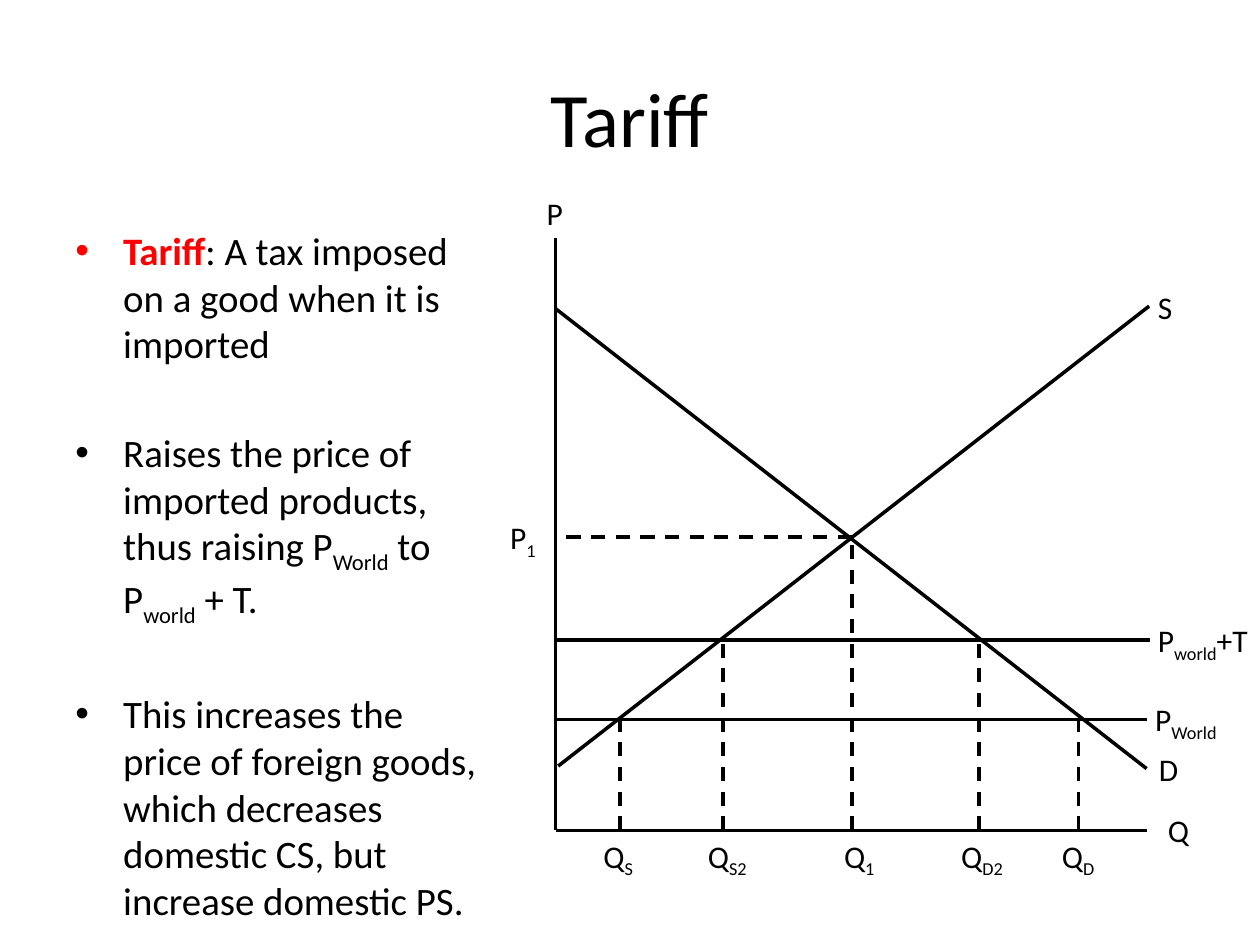
from lxml.etree import SubElement
from pptx import Presentation
from pptx.dml.color import RGBColor
from pptx.enum.dml import MSO_LINE
from pptx.enum.shapes import MSO_CONNECTOR
from pptx.enum.text import MSO_ANCHOR, PP_ALIGN
from pptx.oxml.ns import qn
from pptx.util import Inches, Pt

FONT = "Calibri"
BLACK, RED = "000000", "FF0000"
LEFT, RIGHT, TOP, BASE = 4.41, 9.1, 1.89, 6.59
EQUILIBRIUM = (6.76, 4.26)
WORLD_PRICE, TARIFF_PRICE = 5.71, 5.08
LABEL_HEIGHT = 0.4
QUANTITY_WIDTH = 0.65

POINTS = [
    ("Tariff", (": A tax imposed on a good when it is imported",)),
    ("", ("Raises the price of imported products, thus raising P", "World",
          " to P", "world", " + T.")),
    ("", ("This increases the price of foreign goods, which decreases "
          "domestic CS, but increase domestic PS.",)),
]
SOLID_LINES = [
    ((LEFT, TOP), (LEFT, BASE)),
    ((LEFT, BASE), (RIGHT, BASE)),
    ((4.43, 6.08), (9.12, 2.43)),
    ((LEFT, 2.45), (RIGHT, 6.1)),
    ((LEFT, WORLD_PRICE), (RIGHT, WORLD_PRICE)),
    ((LEFT, TARIFF_PRICE), (9.13, TARIFF_PRICE)),
]
QUANTITIES = [
    (4.92, WORLD_PRICE, 4.69, ("Q", "S")),
    (5.74, TARIFF_PRICE, 5.52, ("Q", "S2")),
    (EQUILIBRIUM[0], EQUILIBRIUM[1], 6.6, ("Q", "1")),
    (7.77, TARIFF_PRICE, 7.53, ("Q", "D2")),
    (8.56, WORLD_PRICE, 8.33, ("Q", "D")),
]
LABELS = [
    (4.24, 1.69, 0.33, ("P",)),
    (3.95, EQUILIBRIUM[1], 0.42, ("P", "1")),
    (9.09, 2.44, 0.32, ("S",)),
    (9.09, TARIFF_PRICE, 0.98, ("P", "world", "+T")),
    (9.07, WORLD_PRICE, 0.76, ("P", "World")),
    (9.1, 6.1, 0.36, ("D",)),
    (9.17, BASE, 0.37, ("Q",)),
]


def color(value):
    return RGBColor.from_string(value)


def add_run(paragraph, text, size, fill=BLACK, bold=False, subscript=False):
    run = paragraph.add_run()
    run.text = text
    run.font.name, run.font.size, run.font.bold = FONT, Pt(size), bold
    run.font.color.rgb = color(fill)
    if subscript:
        run.font._element.set("baseline", "-25000")


def add_bullet(paragraph):
    properties = paragraph._p.get_or_add_pPr()
    properties.set("marL", str(Inches(0.38)))
    properties.set("indent", str(Inches(-0.38)))
    SubElement(properties, qn("a:buFont")).set("typeface", "Arial")
    SubElement(properties, qn("a:buChar")).set("char", "•")


def add_text(slide, box, paragraphs, size=18, align=PP_ALIGN.LEFT,
             anchor=MSO_ANCHOR.TOP, wrap=True, bullets=False, gap=0):
    frame = slide.shapes.add_textbox(*map(Inches, box)).text_frame
    frame.word_wrap, frame.vertical_anchor = wrap, anchor
    for index, (lead, parts) in enumerate(paragraphs):
        paragraph = frame.add_paragraph() if index else frame.paragraphs[0]
        paragraph.alignment = align
        if bullets:
            paragraph.space_before = Pt(gap if index else size * 0.2)
            add_bullet(paragraph)
        if lead:
            add_run(paragraph, lead, size, fill=RED, bold=True)
        for position, part in enumerate(parts):
            add_run(paragraph, part, size, subscript=position % 2 == 1)


def add_label(slide, left, top, width, parts):
    add_text(slide, (left, top, width, LABEL_HEIGHT), [("", parts)], wrap=False)


def add_line(slide, start, end, dashed=False):
    connector = slide.shapes.add_connector(
        MSO_CONNECTOR.STRAIGHT, *map(Inches, start + end))
    connector.line.color.rgb = color(BLACK)
    connector.line.width = Pt(2)
    if dashed:
        connector.line.dash_style = MSO_LINE.DASH
    SubElement(connector._element.spPr, qn("a:effectLst"))


def main():
    presentation = Presentation()
    presentation.slide_width, presentation.slide_height = Inches(10), Inches(7.5)
    slide = presentation.slides.add_slide(presentation.slide_layouts[6])

    add_text(slide, (0.5, 0.3, 9, 1.25), [("", ("Tariff",))], size=44,
             align=PP_ALIGN.CENTER, anchor=MSO_ANCHOR.MIDDLE)
    add_text(slide, (0.5, 1.75, 3.4, 4.95), POINTS, size=22.2,
             bullets=True, gap=35.5)

    for start, end in SOLID_LINES:
        add_line(slide, start, end)
    add_line(slide, EQUILIBRIUM, (LEFT, EQUILIBRIUM[1]), dashed=True)
    for quantity, price, label_left, parts in QUANTITIES:
        add_line(slide, (quantity, BASE), (quantity, price), dashed=True)
        add_label(slide, label_left, BASE, QUANTITY_WIDTH, parts)
    for left, middle, width, parts in LABELS:
        add_label(slide, left, middle - LABEL_HEIGHT / 2, width, parts)

    presentation.save("out.pptx")


if __name__ == "__main__":
    main()
